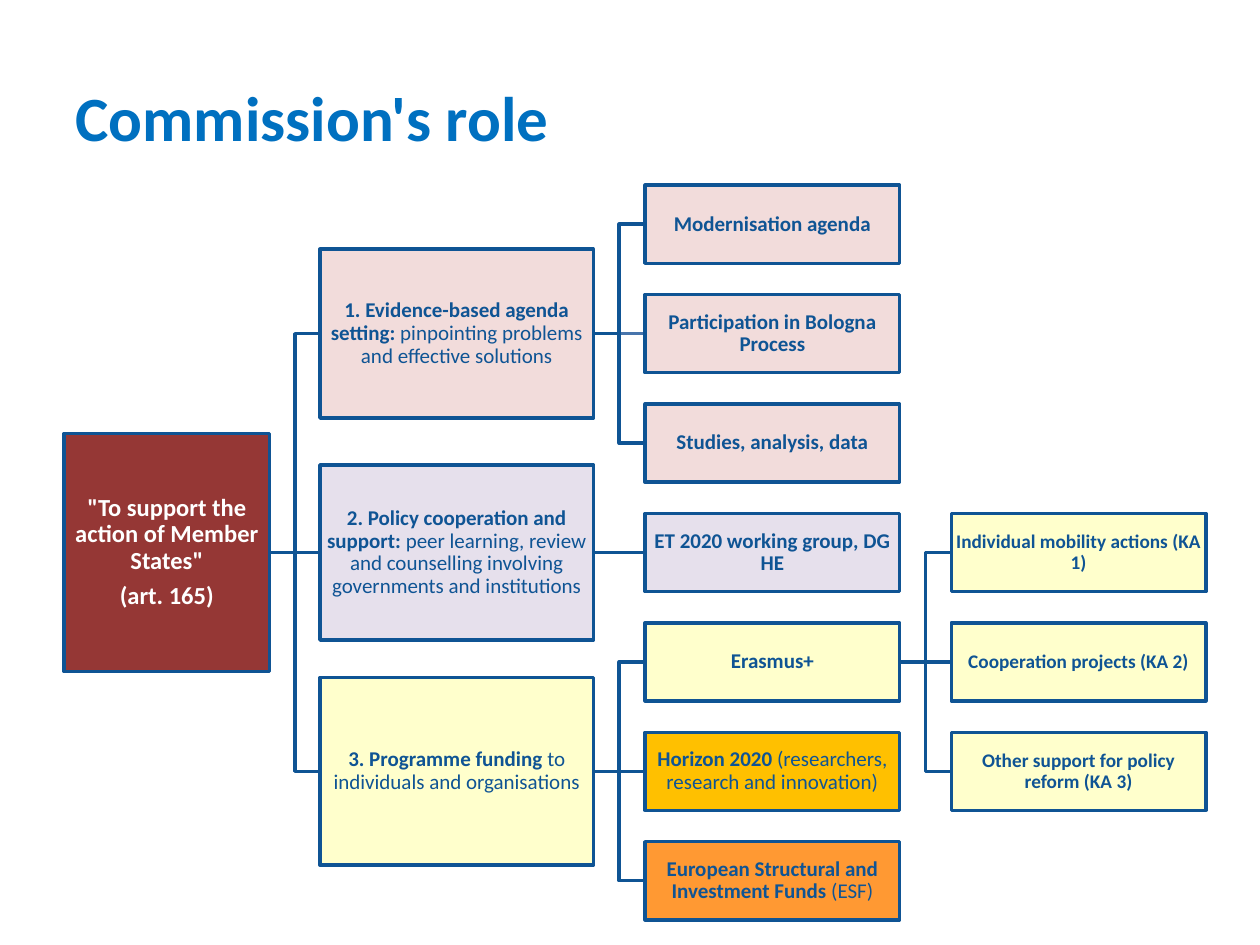
import pptx
import pptx.dml.color
import pptx.enum.shapes
import pptx.enum.text
import pptx.oxml.ns
import pptx.util
from lxml import etree
from pptx.util import Inches

COLORS = {
    "title": "0070C0",
    "blue": "0F5494",
    "light_blue": "4875AC",
    "white": "FFFFFF",
    "red": "953735",
    "pink": "F2DCDB",
    "lilac": "E6E0EC",
    "yellow": "FFFFCC",
    "amber": "FFC000",
    "orange": "FF9933",
}
COLUMNS = [(0.51, 1.63), (2.54, 2.17), (5.12, 2.02), (7.55, 2.02)]
FIRST_CENTER = 1.78
ROW_PITCH = (6.99 - FIRST_CENTER) / 6
LEAF_HEIGHT = 0.62

NODES = {
    "root": (0, 3, 1.89, "red", [('"To support the action of Member States"', ""), ("(art. 165)", "")]),
    "evidence": (1, 1, 1.34, "pink", [("1. Evidence-based agenda setting: ", "pinpointing problems and effective solutions")]),
    "policy": (1, 3, 1.39, "lilac", [("2. Policy cooperation and support: ", "peer learning, review and counselling involving governments and institutions")]),
    "funding": (1, 5, 1.49, "yellow", [("3. Programme funding ", "to individuals and organisations")]),
    "modernisation": (2, 0, LEAF_HEIGHT, "pink", [("Modernisation agenda", "")]),
    "bologna": (2, 1, LEAF_HEIGHT, "pink", [("Participation in Bologna Process", "")]),
    "studies": (2, 2, LEAF_HEIGHT, "pink", [("Studies, analysis, data", "")]),
    "working_group": (2, 3, LEAF_HEIGHT, "lilac", [("ET 2020 working group, DG HE", "")]),
    "erasmus": (2, 4, LEAF_HEIGHT, "yellow", [("Erasmus+", "")]),
    "horizon": (2, 5, LEAF_HEIGHT, "amber", [("Horizon 2020 ", "(researchers, research and innovation)")]),
    "structural": (2, 6, LEAF_HEIGHT, "orange", [("European Structural and Investment Funds ", "(ESF)")]),
    "mobility": (3, 3, LEAF_HEIGHT, "yellow", [("Individual mobility actions (KA 1)", "")]),
    "cooperation": (3, 4, LEAF_HEIGHT, "yellow", [("Cooperation projects (KA 2)", "")]),
    "reform": (3, 5, LEAF_HEIGHT, "yellow", [("Other support for policy reform (KA 3)", "")]),
}
BRANCHES = {
    "funding": ["structural", "horizon", "erasmus"],
    "erasmus": ["reform", "cooperation", "mobility"],
    "root": ["funding", "policy", "evidence"],
    "policy": ["working_group"],
    "evidence": ["bologna", "studies", "modernisation"],
}
TEXT_SIZES = [14, 12, 12, 11]


def row_center(row):
    return FIRST_CENTER + row * ROW_PITCH


class SlideBuilder:
    font_name = "Calibri"
    line_width = 2

    def __init__(self, slide):
        self.slide = slide

    def color(self, name):
        return pptx.dml.color.RGBColor.from_string(COLORS[name])

    def style_line(self, line, color="blue"):
        line.color.rgb = self.color(color)
        line.width = pptx.util.Pt(self.line_width)

    def style_font(self, font, size, color):
        font.name = self.font_name
        font.size = pptx.util.Pt(size)
        font.color.rgb = self.color(color)

    def title(self, text):
        title = self.slide.shapes.title
        title.left, title.top = Inches(0.5), Inches(0.3)
        title.width, title.height = Inches(9), Inches(1.25)
        title.text_frame.vertical_anchor = pptx.enum.text.MSO_ANCHOR.MIDDLE
        paragraph = title.text_frame.paragraphs[0]
        paragraph.text = text
        paragraph.alignment = pptx.enum.text.PP_ALIGN.LEFT
        self.style_font(paragraph.font, 36, "title")
        paragraph.font.bold = True

    def straight(self, left, right, center, color):
        connector = self.slide.shapes.add_connector(
            pptx.enum.shapes.MSO_CONNECTOR.STRAIGHT,
            Inches(left), Inches(center), Inches(right), Inches(center))
        self.style_line(connector.line, color)
        etree.SubElement(connector._element.spPr, pptx.oxml.ns.qn("a:effectLst"))

    def elbow(self, left, right, start, end):
        middle = (left + right) / 2
        builder = self.slide.shapes.build_freeform(Inches(left), Inches(start))
        corners = [(middle, start), (middle, end), (right, end)]
        builder.add_line_segments([(Inches(x), Inches(y)) for x, y in corners], close=False)
        shape = builder.convert_to_shape()
        shape.shadow.inherit = False
        shape.fill.background()
        self.style_line(shape.line)

    def branch(self, parent, child):
        parent_column, parent_row = NODES[parent][:2]
        child_column, child_row = NODES[child][:2]
        left = sum(COLUMNS[parent_column])
        right = COLUMNS[child_column][0]
        if parent_row == child_row:
            color = "light_blue" if child == "bologna" else "blue"
            self.straight(left, right, row_center(parent_row), color)
        else:
            self.elbow(left, right, row_center(parent_row), row_center(child_row))

    def box(self, column, row, height, fill, paragraphs):
        left, width = COLUMNS[column]
        shape = self.slide.shapes.add_shape(
            pptx.enum.shapes.MSO_SHAPE.RECTANGLE, Inches(left),
            Inches(row_center(row) - height / 2), Inches(width), Inches(height))
        shape.shadow.inherit = False
        shape.fill.solid()
        shape.fill.fore_color.rgb = self.color(fill)
        self.style_line(shape.line)
        frame = shape.text_frame
        frame.word_wrap = True
        frame.vertical_anchor = pptx.enum.text.MSO_ANCHOR.MIDDLE
        frame.margin_left = frame.margin_right = Inches(0.01)
        frame.margin_top = frame.margin_bottom = Inches(0.01)
        size = TEXT_SIZES[column]
        for index, (strong, plain) in enumerate(paragraphs):
            paragraph = frame.paragraphs[0] if index == 0 else frame.add_paragraph()
            paragraph.alignment = pptx.enum.text.PP_ALIGN.CENTER
            paragraph.line_spacing = 0.9
            if index < len(paragraphs) - 1:
                paragraph.space_after = pptx.util.Pt(5)
            self.style_font(paragraph.font, size, "white" if fill == "red" else "blue")
            for text, bold in ((strong, True), (plain, False)):
                if text:
                    run = paragraph.add_run()
                    run.text = text
                    run.font.bold = bold


def main():
    presentation = pptx.Presentation()
    presentation.slide_width, presentation.slide_height = Inches(10), Inches(7.5)
    builder = SlideBuilder(presentation.slides.add_slide(presentation.slide_layouts[5]))
    builder.title("Commission's role")
    for parent, children in BRANCHES.items():
        for child in children:
            builder.branch(parent, child)
    for node in NODES.values():
        builder.box(*node)
    presentation.save("out.pptx")


if __name__ == "__main__":
    main()
